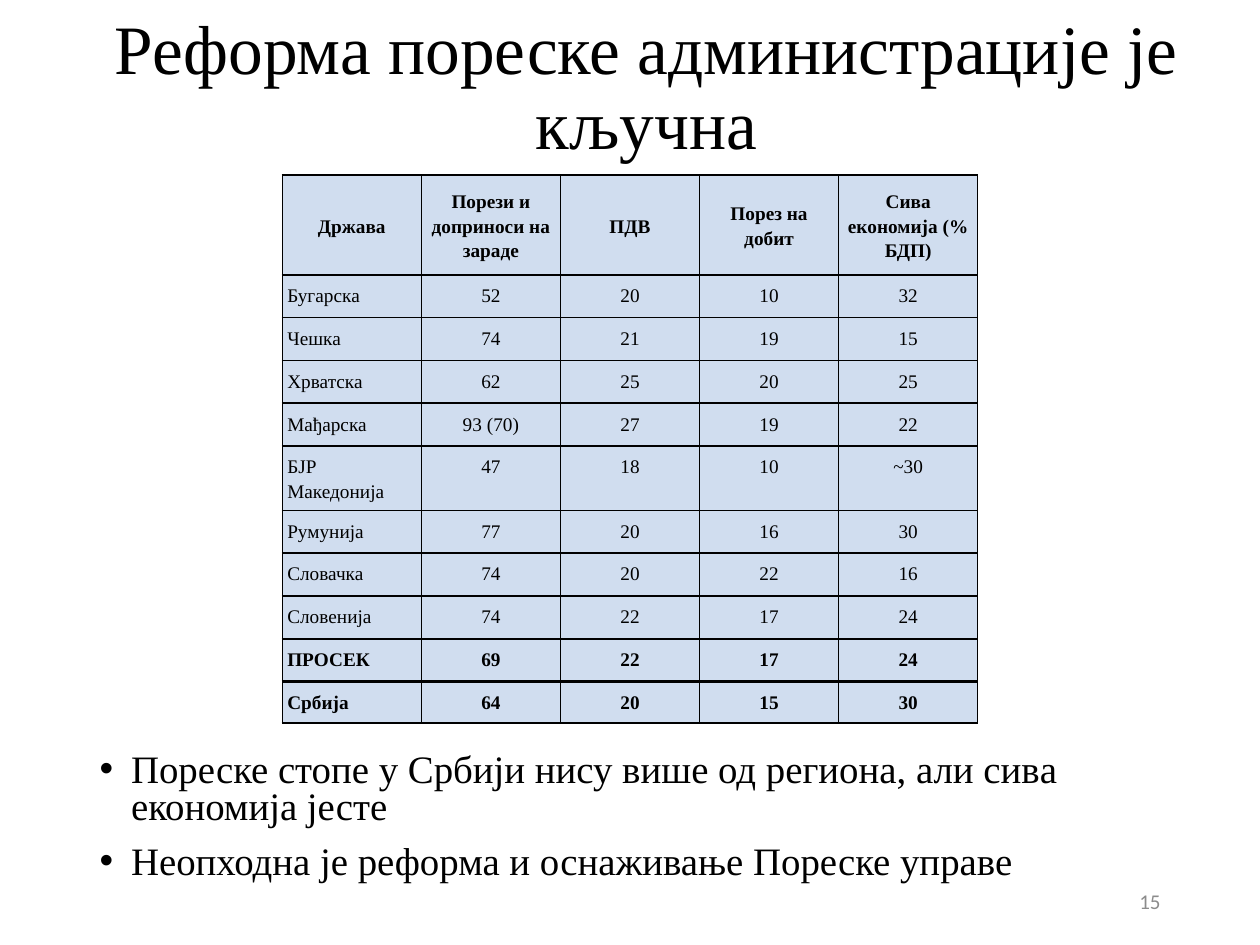
from lxml.etree import SubElement
from pptx import Presentation
from pptx.dml.color import RGBColor
from pptx.enum.text import MSO_ANCHOR as Anchor, MSO_AUTO_SIZE as AutoSize, PP_ALIGN as Align
from pptx.oxml.ns import qn
from pptx.util import Inches, Pt

BLACK = RGBColor(0x00, 0x00, 0x00)
GREY = RGBColor(0x8C, 0x8C, 0x8C)
PALE_BLUE = RGBColor(0xD0, 0xDD, 0xEF)

TITLE = "Реформа пореске администрације је кључна"
CONCLUSIONS = [
    "Пореске стопе у Србији нису више од региона, али сивa економија јесте",
    "Неопходна је реформа и оснаживање Пореске управе",
]
TAX_RATES = [
    ["Држава", "Порези и доприноси на зараде", "ПДВ", "Порез на добит", "Сива економија (% БДП)"],
    ["Бугарска", "52", "20", "10", "32"],
    ["Чешка", "74", "21", "19", "15"],
    ["Хрватска", "62", "25", "20", "25"],
    ["Мађарска", "93 (70)", "27", "19", "22"],
    ["БЈР Македонија", "47", "18", "10", "~30"],
    ["Румунија", "77", "20", "16", "30"],
    ["Словачка", "74", "20", "22", "16"],
    ["Словенија", "74", "22", "17", "24"],
    ["ПРОСЕК", "69", "22", "17", "24"],
    ["Србија", "64", "20", "15", "30"],
]
ROW_HEIGHTS = [0.79] + [0.34] * 9 + [0.33]
BOLD_ROWS = {0, 9, 10}
HEAVY_RULES = {1, 9, 10}


def write(paragraph, text, size, font="Times New Roman", color=BLACK, bold=False,
          align=Align.LEFT, spacing=1.0, before=0):
    """Put formatted text into a paragraph."""
    paragraph.alignment = align
    paragraph.line_spacing = spacing
    paragraph.space_before = Pt(before)
    run = paragraph.add_run()
    run.text = text
    run.font.size = Pt(size)
    run.font.name = font
    run.font.bold = bold
    run.font.color.rgb = color


def place(box, left, top, width, height, anchor):
    """Position a text shape and fix its wrapping and anchor."""
    box.left, box.top = Inches(left), Inches(top)
    box.width, box.height = Inches(width), Inches(height)
    frame = box.text_frame
    frame.word_wrap = True
    frame.auto_size = AutoSize.NONE
    frame.vertical_anchor = anchor
    return frame


def add_bullet(paragraph):
    """Give a paragraph a round bullet with a hanging indent."""
    properties = paragraph._p.get_or_add_pPr()
    properties.set("marL", str(Inches(0.25)))
    properties.set("indent", str(-Inches(0.25)))
    SubElement(properties, qn("a:buFont"), typeface="Arial")
    SubElement(properties, qn("a:buChar"), char="•")


def fill_conclusions(body):
    """Write the bulleted conclusions below the table."""
    frame = place(body, 0.69, 2, 8.62, 5.11, Anchor.BOTTOM)
    frame.margin_bottom = Inches(0.1)
    for index, conclusion in enumerate(CONCLUSIONS):
        paragraph = frame.add_paragraph() if index else frame.paragraphs[0]
        write(paragraph, conclusion, 22.2, spacing=0.8, before=10)
        add_bullet(paragraph)


def set_borders(cell, top, bottom):
    """Draw black borders with the given top and bottom widths in points."""
    properties = cell._tc.get_or_add_tcPr()
    for index, (side, width) in enumerate(zip("LRTB", (1, 1, top, bottom))):
        line = properties.makeelement(qn(f"a:ln{side}"), {"w": str(Pt(width))})
        color = SubElement(line, qn("a:solidFill"))
        SubElement(color, qn("a:srgbClr"), val=str(BLACK))
        properties.insert(index, line)


def fill_cell(cell, text, row, column):
    """Write and style one cell by its place in the table."""
    cell.fill.solid()
    cell.fill.fore_color.rgb = PALE_BLUE
    cell.margin_left = cell.margin_right = Inches(0.04)
    cell.margin_top = cell.margin_bottom = Inches(0.06)
    cell.vertical_anchor = Anchor.TOP if row else Anchor.MIDDLE
    align = Align.JUSTIFY if row and column == 0 else Align.CENTER
    write(cell.text_frame.paragraphs[0], text, 11, bold=row in BOLD_ROWS,
          align=align, spacing=1.15)
    top, bottom = (1.5 if rule in HEAVY_RULES else 1 for rule in (row, row + 1))
    set_borders(cell, top, bottom)


def add_tax_table(slide):
    """Add the table comparing tax rates by country."""
    table = slide.shapes.add_table(
        len(TAX_RATES), len(TAX_RATES[0]),
        Inches(2.24), Inches(1.39), Inches(5.52), Inches(sum(ROW_HEIGHTS))).table
    table.first_row = table.horz_banding = False
    for row, (height, values) in enumerate(zip(ROW_HEIGHTS, TAX_RATES)):
        table.rows[row].height = Inches(height)
        for column, text in enumerate(values):
            fill_cell(table.cell(row, column), text, row, column)


def main():
    """Build and save the slide."""
    deck = Presentation()
    deck.slide_width, deck.slide_height = Inches(10), Inches(7.5)
    slide = deck.slides.add_slide(deck.slide_layouts[1])

    heading = place(slide.shapes.title, 0.72, 0.25, 8.82, 0.92, Anchor.MIDDLE)
    write(heading.paragraphs[0], TITLE, 39.6, align=Align.CENTER, spacing=0.9)
    fill_conclusions(slide.placeholders[1])
    add_tax_table(slide)

    page_number = place(slide.shapes.add_textbox(0, 0, 0, 0), 7.06, 6.95, 2.25, 0.4, Anchor.MIDDLE)
    write(page_number.paragraphs[0], "15", 12, font="Calibri", color=GREY, align=Align.RIGHT)
    deck.save("out.pptx")


if __name__ == "__main__":
    main()
